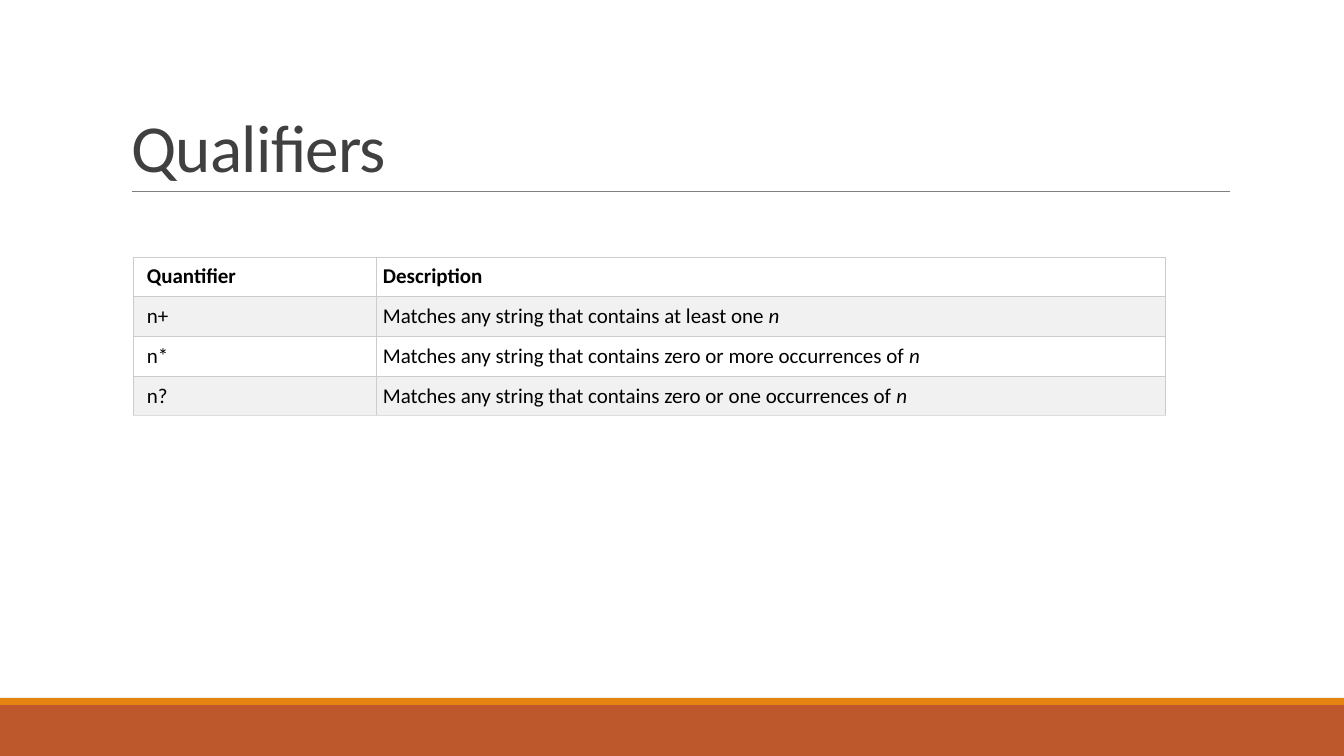
from lxml import etree
from pptx import Presentation
from pptx.dml.color import RGBColor
from pptx.enum.shapes import MSO_CONNECTOR, MSO_SHAPE
from pptx.enum.text import MSO_ANCHOR, PP_ALIGN
from pptx.oxml.ns import qn
from pptx.util import Pt

PX = 914400 / 100.8
WIDE, HIGH = 1344, 756
FONT = "Calibri"
RECT = MSO_SHAPE.RECTANGLE
STRAIGHT = MSO_CONNECTOR.STRAIGHT
TOP, BOTTOM = MSO_ANCHOR.TOP, MSO_ANCHOR.BOTTOM
LEFT = PP_ALIGN.LEFT
TITLE_ONLY = 5

COLORS = {
    "rust": "BD582C",
    "amber": "E48312",
    "rule": "808080",
    "title": "404040",
    "text": "000000",
    "plain": "FFFFFF",
    "band": "F1F1F1",
    "grid": "CCCCCC",
    "foot": "DDDDDD",
}

HEADS = ("Quantifier", "Description")
ROWS = [
    ("n+", "Matches any string that contains at least one "),
    ("n*", "Matches any string that contains zero or more occurrences of "),
    ("n?", "Matches any string that contains zero or one occurrences of "),
]


def px(*sizes):
    return [round(size * PX) for size in sizes]


def color(name):
    return RGBColor.from_string(COLORS[name])


def style(run, size, name):
    run.font.name = FONT
    run.font.size = Pt(size)
    run.font.color.rgb = color(name)


def add_bar(slide, box, name):
    bar = slide.shapes.add_shape(RECT, *px(*box))
    bar.shadow.inherit = False
    bar.fill.solid()
    bar.fill.fore_color.rgb = color(name)
    bar.line.fill.background()


def add_footer(slide, box):
    """Draw the wide band with a thin stripe along its top."""
    x, y, w, h = box
    stripe = 7
    add_bar(slide, (x, y + stripe, w, h - stripe), "rust")
    add_bar(slide, (x, y, w, stripe), "amber")


def add_title(slide, box, text):
    """Set the title at the bottom of the box, with a rule below it."""
    x, y, w, h = box
    title = slide.shapes.title
    title.left, title.top, title.width, title.height = px(*box)
    frame = title.text_frame
    frame.text = text
    frame.word_wrap = True
    frame.vertical_anchor = BOTTOM
    para = frame.paragraphs[0]
    para.alignment = LEFT
    para.line_spacing = 0.85
    run = para.runs[0]
    style(run, 48, "title")
    run.font.bold = False
    run.font._element.set("spc", "-50")

    rule = slide.shapes.add_connector(
        STRAIGHT, *px(x + 11, y + h, x + w, y + h))
    rule.line.color.rgb = color("rule")
    rule.line.width = Pt(0.5)
    etree.SubElement(rule._element.spPr, qn("a:effectLst"))


def add_borders(cell, foot):
    props = cell._tc.get_or_add_tcPr()
    names = {"lnL": "grid", "lnR": "grid", "lnT": "grid", "lnB": foot}
    for spot, (side, name) in enumerate(names.items()):
        line = etree.Element(qn(f"a:{side}"), w=str(Pt(0.75)))
        fill = etree.SubElement(line, qn("a:solidFill"))
        etree.SubElement(fill, qn("a:srgbClr"), val=COLORS[name])
        props.insert(spot, line)


def fill_cell(cell, text, row, col):
    head, last = row == 0, row == len(ROWS)
    cell.fill.solid()
    cell.fill.fore_color.rgb = color("band" if row % 2 else "plain")
    pads = px(7 if col else 14, 7, 7, 7)
    (cell.margin_left, cell.margin_top,
     cell.margin_right, cell.margin_bottom) = pads
    cell.vertical_anchor = TOP
    para = cell.text_frame.paragraphs[0]
    para.alignment = LEFT
    para.add_run().text = text
    if col and not head:
        sign = para.add_run()
        sign.text = "n"
        sign.font.italic = True
    for run in para.runs:
        style(run, 15, "text")
        run.font.bold = head
    add_borders(cell, "foot" if last else "grid")


def add_grid(slide, box):
    """Lay out the quantifier table, with a narrow first column."""
    x, y, w, h = box
    data = [HEADS, *ROWS]
    first = 243
    table = slide.shapes.add_table(len(data), 2, *px(x, y, w, h)).table
    table.horz_banding = False
    table.columns[0].width, table.columns[1].width = px(first, w - first)
    for row, texts in enumerate(data):
        table.rows[row].height = px(h / len(data))[0]
        for col, text in enumerate(texts):
            fill_cell(table.cell(row, col), text, row, col)


def main():
    deck = Presentation()
    deck.slide_width, deck.slide_height = px(WIDE, HIGH)
    slide = deck.slides.add_slide(deck.slide_layouts[TITLE_ONLY])
    add_footer(slide, (0, 698, WIDE, HIGH - 698))
    add_title(slide, (121, 31, 1109, 160), "Qualifiers")
    add_grid(slide, (133, 257, 1033, 157))
    deck.save("out.pptx")


if __name__ == "__main__":
    main()
